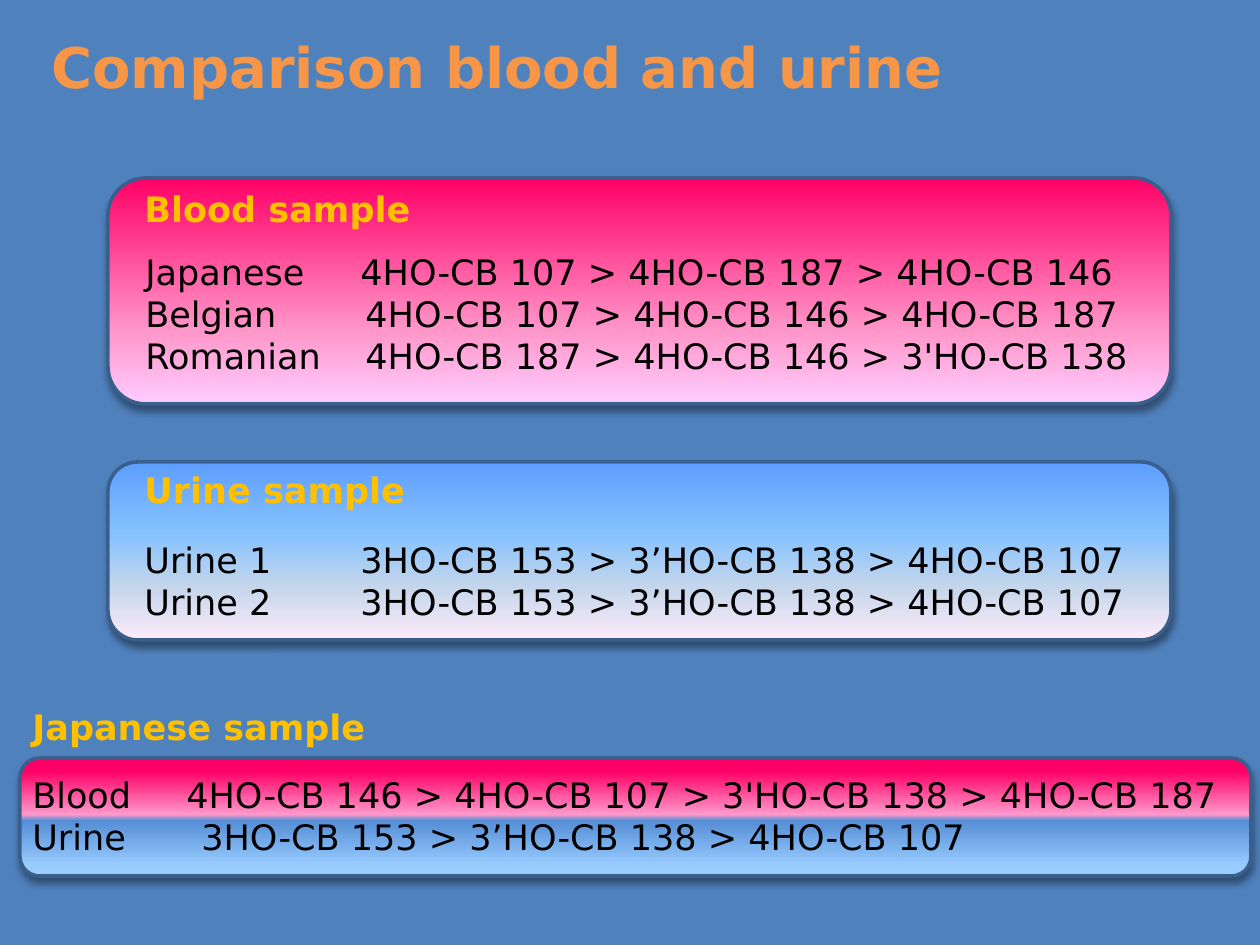
"""Build the slide comparing hydroxylated CB levels in blood and urine."""
from lxml.etree import SubElement
from pptx import Presentation
from pptx.dml.color import RGBColor
from pptx.enum.shapes import MSO_SHAPE
from pptx.enum.text import MSO_ANCHOR
from pptx.oxml.ns import qn
from pptx.util import Pt

PX = 914400 // 126
FONT = "DejaVu Sans"
COLORS = {
    "background": "4F81BD",
    "title": "F79646",
    "heading": "FFC000",
    "text": "000000",
    "outline": "3A5F8C",
    "shadow": "000000",
}
TITLE = "Comparison blood and urine"
PANELS = [
    {
        "heading": "Blood sample",
        "heading_box": (132, 181, 292, 55),
        "card": (108, 178, 1063, 226),
        "gradient": [(0, "FF0066"), (69, "FF99CC"), (100, "FFCCFF"), (100, "FFEBFA")],
        "rows_box": (133, 244, 1028, 140),
        "rows": [
            ("Japanese", 215, "4HO-CB 107 > 4HO-CB 187 > 4HO-CB 146"),
            ("Belgian", 220, "4HO-CB 107 > 4HO-CB 146 > 4HO-CB 187"),
            ("Romanian", 220, "4HO-CB 187 > 4HO-CB 146 > 3'HO-CB 138"),
        ],
    },
    {
        "heading": "Urine sample",
        "heading_box": (132, 462, 287, 55),
        "card": (108, 462, 1063, 178),
        "gradient": [(0, "5E9EFF"), (40, "85C2FF"), (70, "C4D6EB"), (100, "FFEBFA")],
        "rows_box": (132, 532, 1028, 97),
        "rows": [
            ("Urine 1", 216, "3HO-CB 153 > 3’HO-CB 138 > 4HO-CB 107"),
            ("Urine 2", 216, "3HO-CB 153 > 3’HO-CB 138 > 4HO-CB 107"),
        ],
    },
    {
        "heading": "Japanese sample",
        "heading_box": (20, 699, 364, 55),
        "card": (20, 758, 1231, 118),
        "gradient": [(11, "FF0066"), (48, "FF99CC"), (53, "558ED5"),
                     (92, "99CCFF"), (100, "99CCFF")],
        "rows_box": (20, 767, 1250, 97),
        "rows": [
            ("Blood", 154, "4HO-CB 146 > 4HO-CB 107 > 3'HO-CB 138 > 4HO-CB 187"),
            ("Urine", 169, "3HO-CB 153 > 3’HO-CB 138 > 4HO-CB 107"),
        ],
    },
]


def emu(box):
    return [length * PX for length in box]


def style(paragraph, size, color, bold=False):
    font = paragraph.font
    font.name, font.size, font.bold = FONT, Pt(size), bold
    font.color.rgb = RGBColor.from_string(COLORS[color])


def add_frame(shapes, box, wrap=True):
    frame = shapes.add_textbox(*emu(box)).text_frame
    frame.word_wrap = wrap
    frame.vertical_anchor = MSO_ANCHOR.TOP
    return frame


def add_heading(shapes, box, text, size, color, wrap=False):
    paragraph = add_frame(shapes, box, wrap).paragraphs[0]
    paragraph.text = text
    style(paragraph, size, color, bold=True)
    return paragraph


def add_card(shapes, box, gradient):
    card = shapes.add_shape(MSO_SHAPE.ROUNDED_RECTANGLE, *emu(box))
    card.line.color.rgb = RGBColor.from_string(COLORS["outline"])
    card.line.width = Pt(2)
    card.fill.gradient()
    card.fill.gradient_angle = 270
    properties = card._element.spPr
    stops = properties.find(".//" + qn("a:gsLst"))
    for stop in list(stops):
        stops.remove(stop)
    for position, color in gradient:
        stop = SubElement(stops, qn("a:gs"), pos=str(position * 1000))
        SubElement(stop, qn("a:srgbClr"), val=color)
    card.shadow.inherit = False
    shadow = SubElement(properties.find(qn("a:effectLst")), qn("a:outerShdw"),
                        blurRad=str(Pt(4)), dist=str(Pt(3)),
                        dir="5400000", rotWithShape="0")
    shade = SubElement(shadow, qn("a:srgbClr"), val=COLORS["shadow"])
    SubElement(shade, qn("a:alpha"), val="40000")


def add_rows(shapes, box, rows):
    frame = add_frame(shapes, box)
    for index, (sample, stop, ranking) in enumerate(rows):
        paragraph = frame.add_paragraph() if index else frame.paragraphs[0]
        paragraph.text = f"{sample}\t{ranking}"
        tabs = SubElement(paragraph._p.get_or_add_pPr(), qn("a:tabLst"))
        SubElement(tabs, qn("a:tab"), pos=str(stop * PX), algn="l")
        style(paragraph, 20, "text")


def main():
    deck = Presentation()
    deck.slide_width, deck.slide_height = emu((1260, 945))
    slide = deck.slides.add_slide(deck.slide_layouts[6])
    background = slide.background.fill
    background.solid()
    background.fore_color.rgb = RGBColor.from_string(COLORS["background"])

    title = add_heading(slide.shapes, (39, 20, 1240, 69), TITLE, 32, "title", wrap=True)
    title.line_spacing = 1.1
    for panel in PANELS:
        shapes = slide.shapes.add_group_shape().shapes
        add_card(shapes, panel["card"], panel["gradient"])
        add_rows(shapes, panel["rows_box"], panel["rows"])
        add_heading(shapes, panel["heading_box"], panel["heading"], 20, "heading")
    deck.save("out.pptx")


if __name__ == "__main__":
    main()
